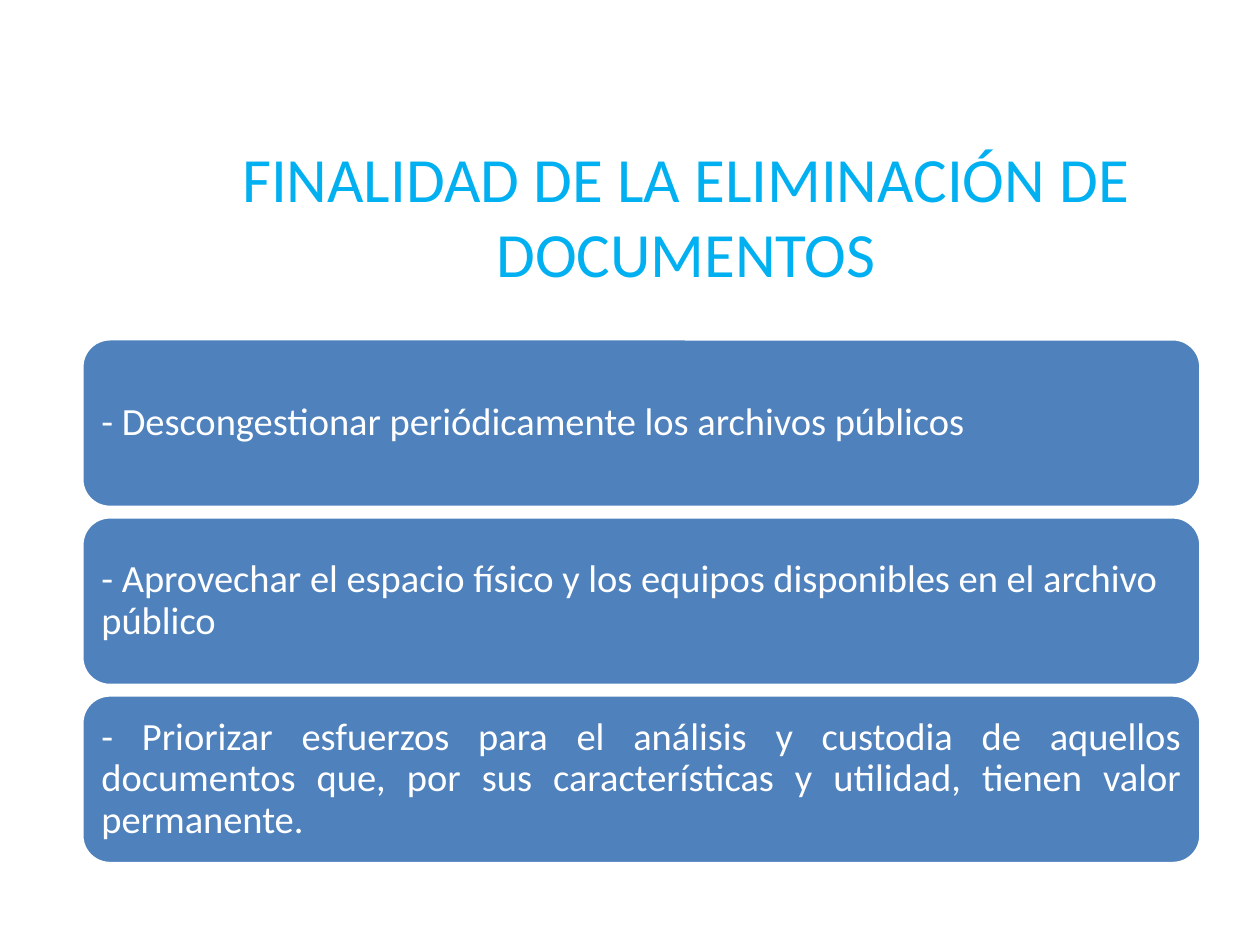
from pptx import Presentation
from pptx import util as u
from pptx.dml.color import RGBColor
from pptx.enum import shapes, text

COLORS = {"title": "00B0F0", "card": "4F81BD", "white": "FFFFFF"}
LEFT, CENTER, JUSTIFY = (text.PP_ALIGN.LEFT, text.PP_ALIGN.CENTER,
                         text.PP_ALIGN.JUSTIFY)
TITLE = "FINALIDAD DE LA ELIMINACIÓN DE DOCUMENTOS"
PURPOSES = [
    ("- Descongestionar periódicamente los archivos públicos", LEFT),
    ("- Aprovechar el espacio físico y los equipos disponibles en el archivo "
     "público", LEFT),
    ("- Priorizar esfuerzos para el análisis y custodia de aquellos documentos "
     "que, por sus características y utilidad, tienen valor permanente.", JUSTIFY),
]
CARD_TOP, CARD_HEIGHT, CARD_GAP = 6.83, 3.4, 0.19


def rgb(name):
    return RGBColor.from_string(COLORS[name])


def set_format(target, values):
    for name, value in values.items():
        setattr(target, name, value)


class SlideBuilder:
    """Holds the font and the slide being filled; lengths are centimetres."""

    def __init__(self, slide, font="Calibri"):
        self.s = slide
        self.font = font

    def add_text(self, sp, content, size, color, frame, paragraph):
        tf = sp.text_frame
        set_format(tf, {"word_wrap": True,
                        "vertical_anchor": text.MSO_ANCHOR.MIDDLE, **frame})
        p = tf.paragraphs[0]
        set_format(p, paragraph)
        r = p.add_run()
        r.text = content
        set_format(r.font, {"name": self.font, "size": u.Pt(size)})
        r.font.color.rgb = rgb(color)

    def title(self, content, *box):
        sp = self.s.shapes.add_textbox(*map(u.Cm, box))
        self.add_text(sp, content, 36, "title", {}, {"alignment": CENTER})

    def card(self, content, align, *box):
        sp = self.s.shapes.add_shape(shapes.MSO_SHAPE.ROUNDED_RECTANGLE,
                                     *map(u.Cm, box))
        sp.shadow.inherit = False
        sp.fill.solid()
        sp.fill.fore_color.rgb = rgb("card")
        sp.line.color.rgb = rgb("white")
        sp.line.width = u.Pt(2)
        sides = ("left", "top", "right", "bottom")
        self.add_text(sp, content, 22, "white",
                      {f"margin_{side}": u.Cm(0.23) for side in sides},
                      {"alignment": align, "line_spacing": 0.9})


def main():
    prs = Presentation()
    set_format(prs, {"slide_width": u.Cm(25.4), "slide_height": u.Cm(19.05)})
    builder = SlideBuilder(prs.slides.add_slide(prs.slide_layouts[6]))
    builder.title(TITLE, 3.43, 3.33, 20.8, 2)
    for i, (content, align) in enumerate(PURPOSES):
        top = CARD_TOP + i * (CARD_HEIGHT + CARD_GAP)
        builder.card(content, align, 1.65, top, 22.56, CARD_HEIGHT)
    prs.save("out.pptx")


if __name__ == "__main__":
    main()
